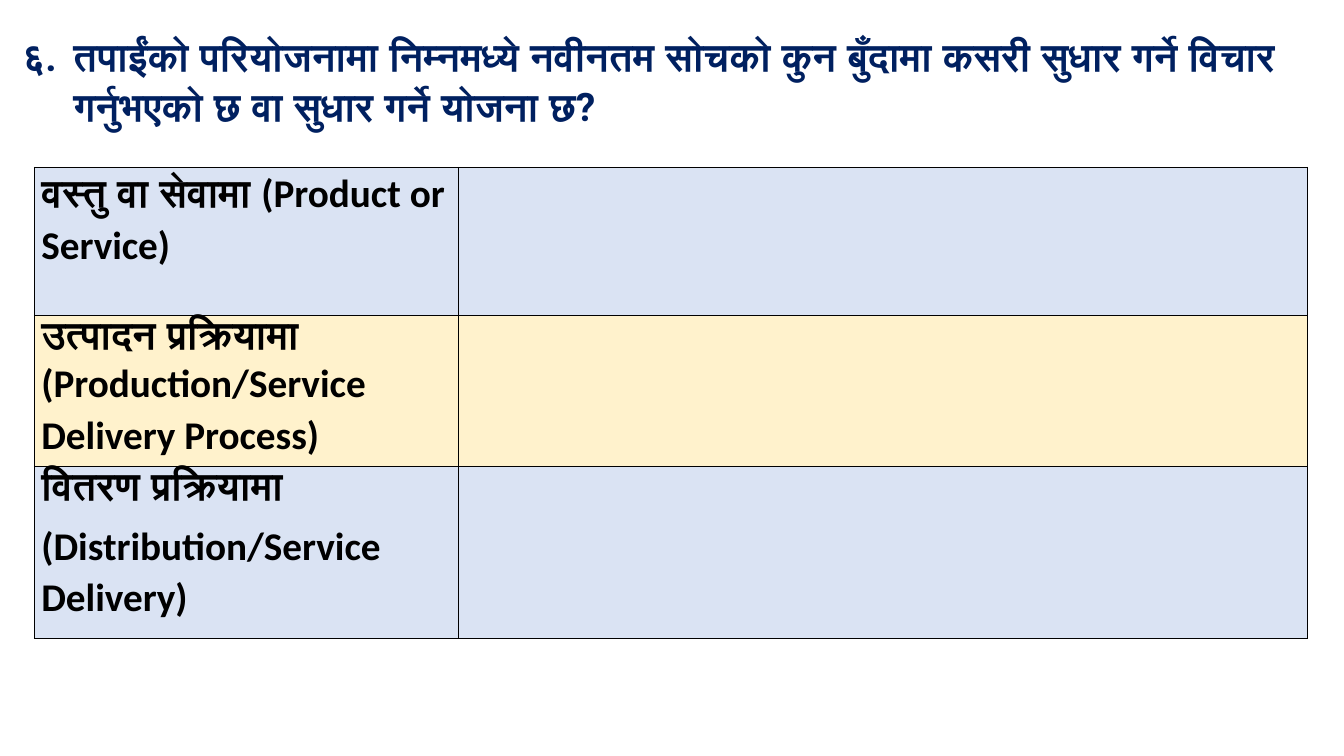
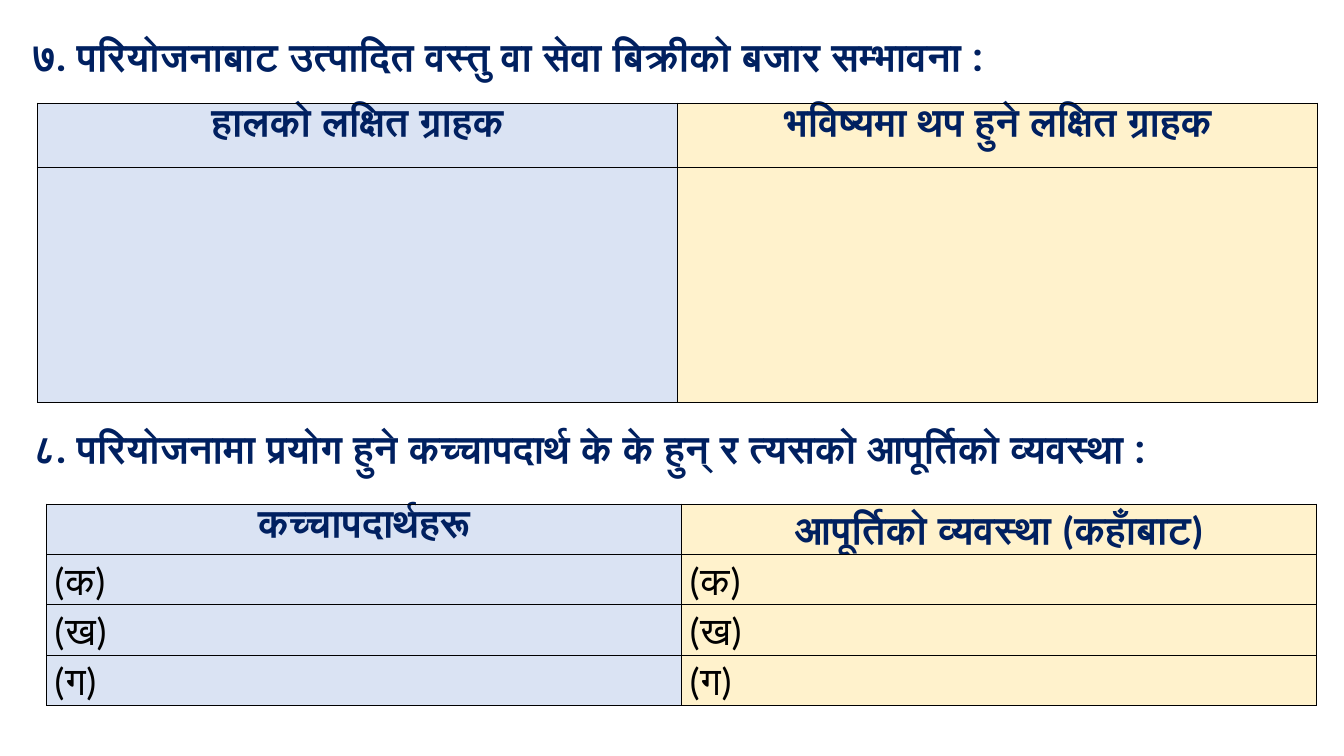
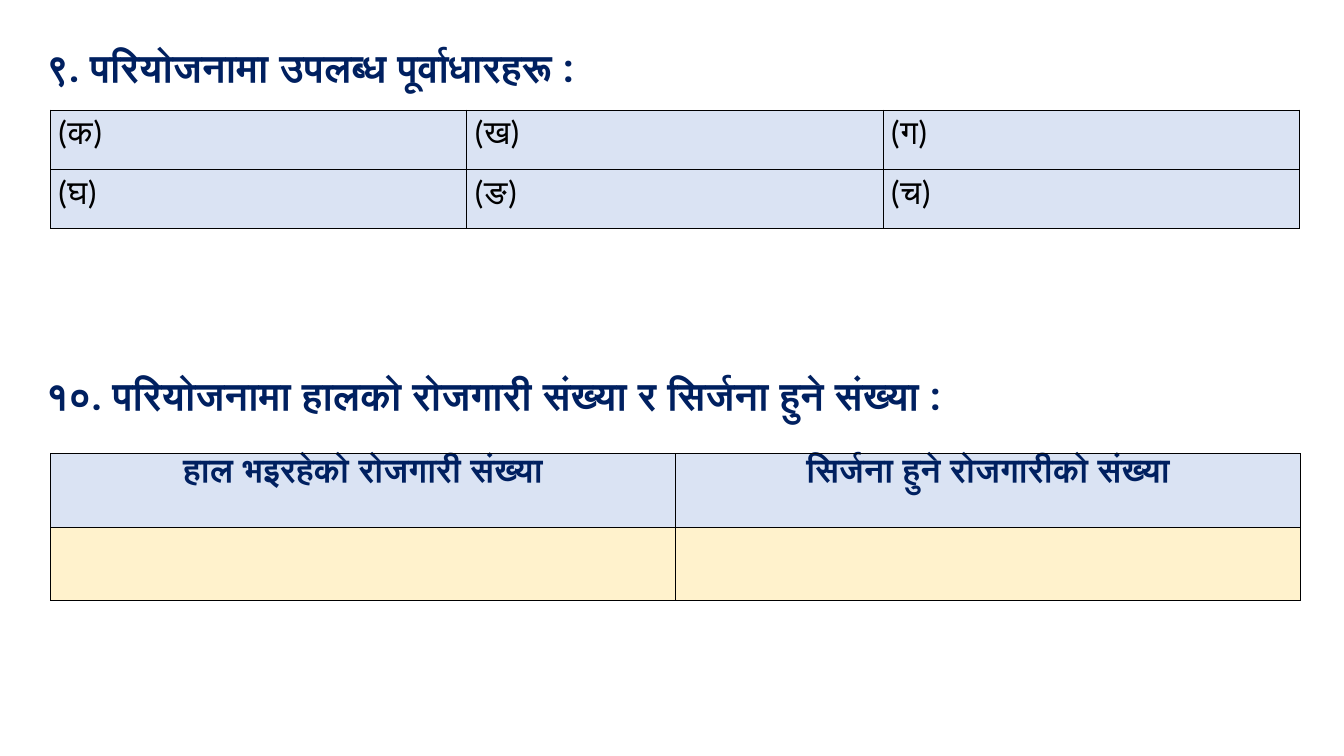
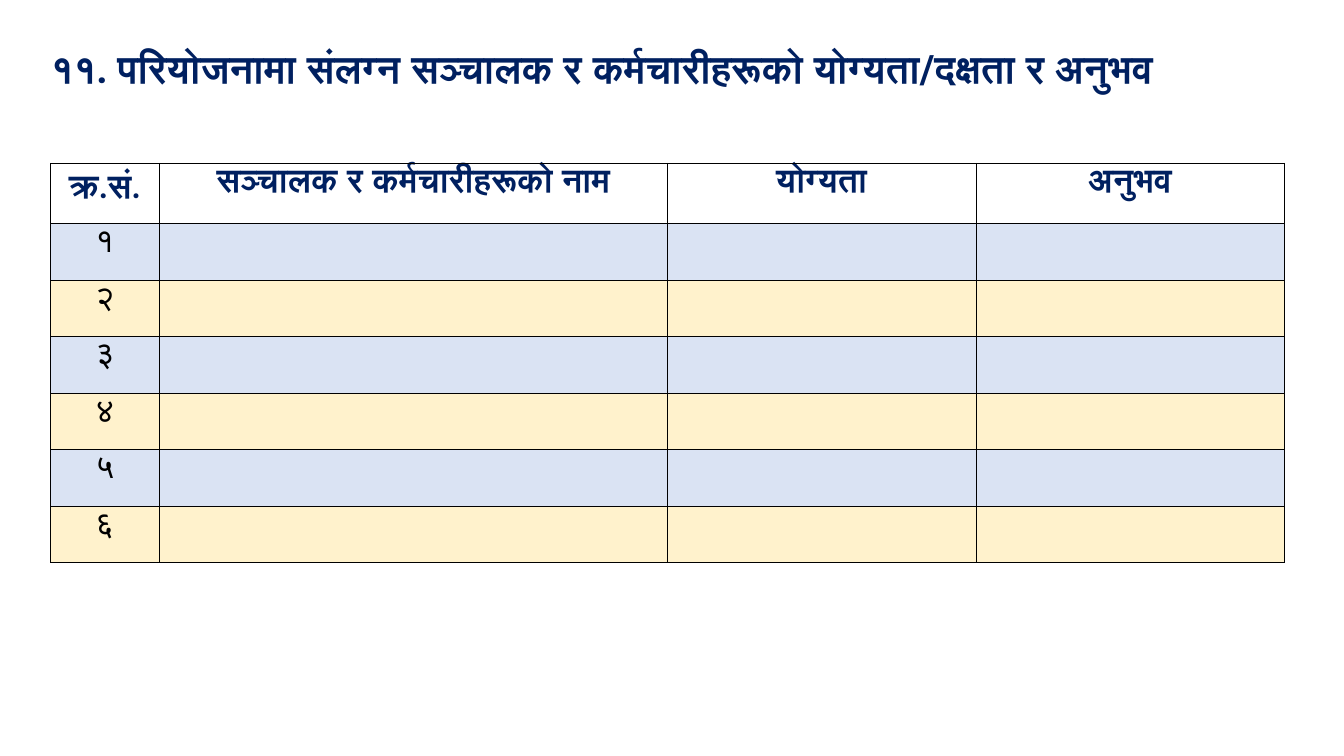
from lxml.etree import SubElement
from pptx import Presentation
from pptx.dml.color import RGBColor
from pptx.enum.text import MSO_AUTO_SIZE, PP_ALIGN
from pptx.oxml.ns import qn
from pptx.util import Inches, Pt

NAVY = RGBColor(0x00, 0x20, 0x60)
BLACK = RGBColor(0x00, 0x00, 0x00)
BLUE = RGBColor(0xDA, 0xE3, 0xF3)
CREAM = RGBColor(0xFF, 0xF2, 0xCC)

HEADING = {"name": "Roboto", "size": Pt(28), "bold": True}
LABEL = {"name": "Calibri", "size": Pt(28), "bold": True}
ITEM = {"name": "Calibri", "size": Pt(28), "bold": False}
SMALL_LABEL = {**LABEL, "size": Pt(24)}
SMALL_ITEM = {**ITEM, "size": Pt(24)}
LEFT_ALIGNED = {"line_spacing": 1.07, "space_after": Pt(0), "alignment": PP_ALIGN.LEFT}
CENTRED = {**LEFT_ALIGNED, "alignment": PP_ALIGN.CENTER}
SPACED = {"space_after": Pt(8)}
CELL_MARGINS = {
    "margin_left": Inches(0.07), "margin_right": Inches(0.07),
    "margin_top": 0, "margin_bottom": 0,
}


def write_text(text_frame, text, font_format, colour, paragraph_format):
    for index, line in enumerate(text.split("\n")):
        paragraph = text_frame.add_paragraph() if index else text_frame.paragraphs[0]
        for name, value in paragraph_format.items():
            setattr(paragraph, name, value)
        run = paragraph.add_run()
        run.text = line
        for name, value in font_format.items():
            setattr(run.font, name, value)
        run.font.color.rgb = colour


def add_grid(slide, left, top, widths, heights, texts, fills, styles):
    table = slide.shapes.add_table(
        len(heights), len(widths), Inches(left), Inches(top),
        Inches(sum(widths)), Inches(sum(heights)),
    ).table
    table.first_row = table.horz_banding = False
    for column, width in zip(table.columns, widths):
        column.width = Inches(width)
    for row, height in zip(table.rows, heights):
        row.height = Inches(height)
    for row_index in range(len(heights)):
        for column_index in range(len(widths)):
            cell = table.cell(row_index, column_index)
            for name, value in CELL_MARGINS.items():
                setattr(cell, name, value)
            properties = cell._tc.get_or_add_tcPr()
            for side in ("a:lnL", "a:lnR", "a:lnT", "a:lnB"):
                border = SubElement(properties, qn(side), w=str(Pt(0.5)))
                border_fill = SubElement(border, qn("a:solidFill"))
                SubElement(border_fill, qn("a:srgbClr"), val=str(BLACK))
            colour = fills[row_index][column_index]
            if colour is None:
                cell.fill.background()
            else:
                cell.fill.solid()
                cell.fill.fore_color.rgb = colour
            text = texts[row_index][column_index]
            if text:
                write_text(cell.text_frame, text, *styles[row_index])


presentation = Presentation()
presentation.slide_width = Inches(13.33)
presentation.slide_height = Inches(7.5)
blank_layout = presentation.slide_layouts[6]

slides_content = [
    {
        "headings": [
            (0.13, 0.24, 13, 1.1, "६.\tतपाईंको परियोजनामा निम्नमध्ये नवीनतम सोचको कुन बुँदामा कसरी सुधार गर्ने विचार गर्नुभएको छ वा सुधार गर्ने योजना छ?"),
        ],
        "tables": [
            {
                "left": 0.34, "top": 1.66,
                "widths": [4.21, 8.42], "heights": [1.47, 1.5, 1.7],
                "texts": [
                    ["वस्तु वा सेवामा (Product or Service)", ""],
                    ["उत्पादन प्रक्रियामा (Production/Service Delivery Process)", ""],
                    ["वितरण प्रक्रियामा\n(Distribution/Service Delivery)", ""],
                ],
                "fills": [[BLUE] * 2, [CREAM] * 2, [BLUE] * 2],
                "styles": [(LABEL, BLACK, {**LEFT_ALIGNED, **SPACED})] * 3,
            },
        ],
    },
    {
        "headings": [
            (0.23, 0.24, 12.84, 0.6, "७. परियोजनाबाट उत्पादित वस्तु वा सेवा बिक्रीको बजार सम्भावना :"),
            (0.23, 4.13, 13.1, 0.6, "८. परियोजनामा प्रयोग हुने कच्चापदार्थ के के हुन् र त्यसको आपूर्तिको व्यवस्था :"),
        ],
        "tables": [
            {
                "left": 0.37, "top": 1.02,
                "widths": [6.35] * 2, "heights": [0.64, 2.33],
                "texts": [["हालको लक्षित ग्राहक", "भविष्यमा थप हुने लक्षित ग्राहक"], [""] * 2],
                "fills": [[BLUE, CREAM]] * 2,
                "styles": [(LABEL, NAVY, {**CENTRED, **SPACED})] * 2,
            },
            {
                "left": 0.46, "top": 5,
                "widths": [6.3] * 2, "heights": [0.5] * 4,
                "texts": [["कच्चापदार्थहरू", "आपूर्तिको व्यवस्था (कहाँबाट)"]]
                + [[letter] * 2 for letter in ("(क)", "(ख)", "(ग)")],
                "fills": [[BLUE, CREAM]] * 4,
                "styles": [(LABEL, NAVY, CENTRED)] + [(ITEM, BLACK, LEFT_ALIGNED)] * 3,
            },
        ],
    },
    {
        "headings": [
            (0.36, 0.35, 12.54, 0.6, "९. परियोजनामा उपलब्ध पूर्वाधारहरू :"),
            (0.36, 3.6, 12.7, 0.6, "१०. परियोजनामा हालको रोजगारी संख्या र सिर्जना हुने संख्या :"),
        ],
        "tables": [
            {
                "left": 0.5, "top": 1.09,
                "widths": [4.13] * 3, "heights": [0.59] * 2,
                "texts": [["(क)", "(ख)", "(ग)"], ["(घ)", "(ङ)", "(च)"]],
                "fills": [[BLUE] * 3] * 2,
                "styles": [(SMALL_ITEM, BLACK, LEFT_ALIGNED)] * 2,
            },
            {
                "left": 0.5, "top": 4.5,
                "widths": [6.2] * 2, "heights": [0.73] * 2,
                "texts": [["हाल भइरहेको रोजगारी संख्या", "सिर्जना हुने रोजगारीको संख्या"], [""] * 2],
                "fills": [[BLUE] * 2, [CREAM] * 2],
                "styles": [(SMALL_LABEL, NAVY, CENTRED)] * 2,
            },
        ],
    },
    {
        "headings": [
            (0.41, 0.36, 12.52, 0.6, "११. परियोजनामा संलग्न सञ्चालक र कर्मचारीहरूको योग्यता/दक्षता र अनुभव"),
        ],
        "tables": [
            {
                "left": 0.5, "top": 1.62,
                "widths": [1.08, 5.04, 3.06, 3.06], "heights": [0.6] + [0.56] * 6,
                "texts": [["क्र.सं.", "सञ्चालक र कर्मचारीहरूको नाम", "योग्यता", "अनुभव"]]
                + [[number, "", "", ""] for number in "१२३४५६"],
                "fills": [[None] * 4] + [[BLUE] * 4, [CREAM] * 4] * 3,
                "styles": [(SMALL_LABEL, NAVY, CENTRED)] + [(SMALL_ITEM, BLACK, CENTRED)] * 6,
            },
        ],
    },
]

for content in slides_content:
    slide = presentation.slides.add_slide(blank_layout)
    for left, top, width, height, text in content["headings"]:
        shape = slide.shapes.add_textbox(Inches(left), Inches(top), Inches(width), Inches(height))
        shape.text_frame.word_wrap = True
        shape.text_frame.auto_size = MSO_AUTO_SIZE.SHAPE_TO_FIT_TEXT
        write_text(shape.text_frame, text, HEADING, NAVY, LEFT_ALIGNED)
        if "\t" in text:
            properties = shape.text_frame.paragraphs[0]._p.get_or_add_pPr()
            properties.set("marL", str(Inches(0.5)))
            properties.set("indent", str(-Inches(0.5)))
    for table_content in content["tables"]:
        add_grid(slide, **table_content)

presentation.save("out.pptx")
